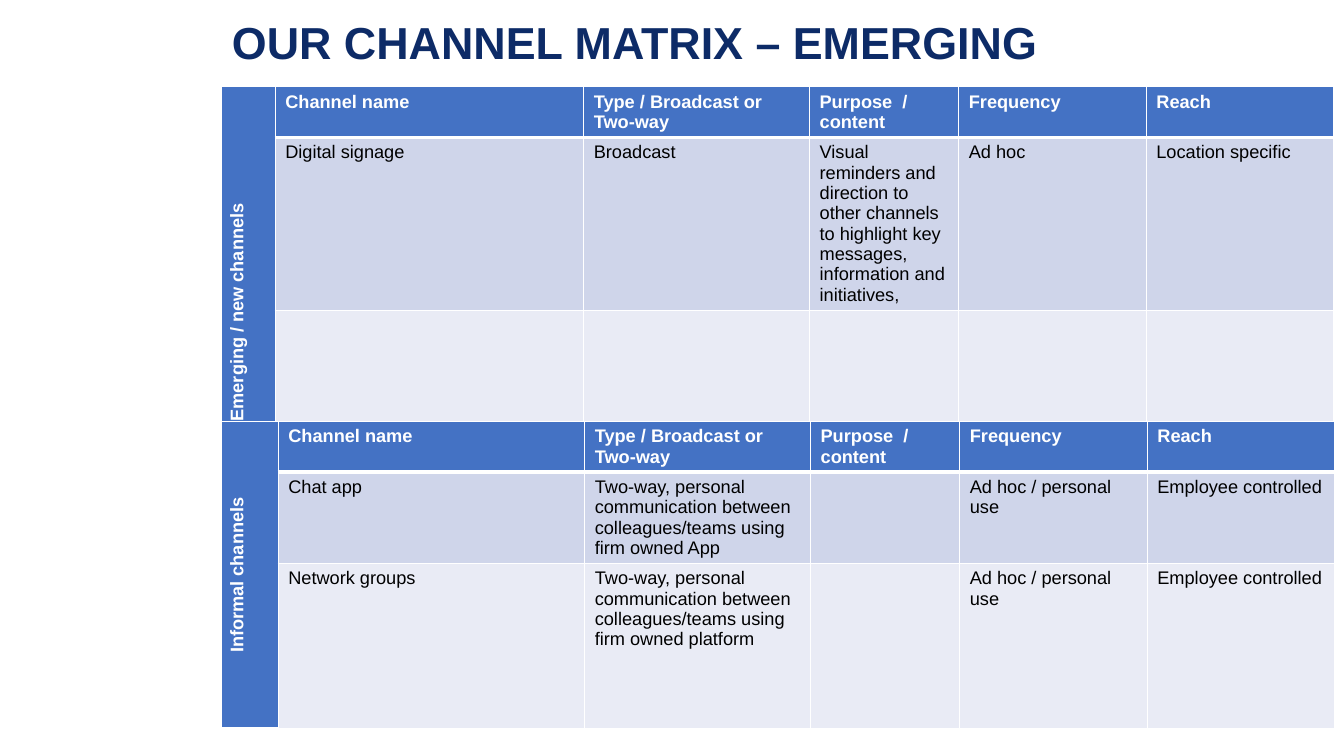
from lxml.etree import SubElement
from pptx import Presentation
from pptx.dml.color import RGBColor
from pptx.enum.text import MSO_ANCHOR, PP_ALIGN
from pptx.oxml.ns import qn
from pptx.util import Inches, Pt

HUES = {"navy": "0D2B67", "head": "4472C4", "odd": "CFD5EA",
        "even": "E9EBF5", "white": "FFFFFF", "black": "000000"}
BANDS = ["head", "odd", "even"]
HEADS = ["Channel name", "Type / Broadcast or Two-way",
         "Purpose  / content", "Frequency", "Reach"]
TAIL = [2.24, 1.48, 1.86, 1.86]
USE = ["", "Ad hoc / personal use", "Employee controlled"]
TEAMS = "Two-way, personal communication between colleagues/teams using "


class Deck:
    def __init__(self):
        self.show = Presentation()
        self.show.slide_width = Inches(13.33)
        self.show.slide_height = Inches(7.5)
        self.slide = self.show.slides.add_slide(self.show.slide_layouts[5])
        self.face = "Arial"
        self.size = 13
        self.left = 2.2
        self.width = 11.03

    def style(self, para, size, hue, bold):
        for run in para.runs:
            font = run.font
            font.name = self.face
            font.size = Pt(size)
            font.bold = bold
            font.color.rgb = RGBColor.from_string(HUES[hue])

    def title(self, text, top, height):
        box = self.slide.shapes.title
        box.left, box.top = Inches(self.left), Inches(top)
        box.width, box.height = Inches(self.width), Inches(height)
        frame = box.text_frame
        frame.text = text
        frame.word_wrap = True
        frame.vertical_anchor = MSO_ANCHOR.MIDDLE
        para = frame.paragraphs[0]
        para.alignment = PP_ALIGN.LEFT
        para.line_spacing = 0.9
        self.style(para, 32, "navy", True)

    def edges(self, cell, top, base):
        props = cell._tc.get_or_add_tcPr()
        for side, width in zip("LRTB", (1, 1, top, base)):
            line = SubElement(props, qn(f"a:ln{side}"), w=str(Pt(width)))
            fill = SubElement(line, qn("a:solidFill"))
            SubElement(fill, qn("a:srgbClr"), val=HUES["white"])

    def cell(self, cell, text, row, band):
        self.edges(cell, 3 if row == 1 else 1, 3 if row == 0 else 1)
        cell.fill.solid()
        cell.fill.fore_color.rgb = RGBColor.from_string(HUES[band])
        if text:
            cell.text_frame.text = text
            top = band == "head"
            para = cell.text_frame.paragraphs[0]
            self.style(para, self.size, "white" if top else "black", top)

    def matrix(self, label, top, height, cols, rows, body):
        frame = self.slide.shapes.add_table(
            len(rows), len(cols), Inches(self.left), Inches(top),
            Inches(self.width), Inches(height))
        table = frame.table
        for col, width in zip(table.columns, cols):
            col.width = Inches(width)
        for row, tall in zip(table.rows, rows):
            row.height = Inches(tall)
        frame.height = Inches(height)
        side = table.cell(0, 0)
        side.merge(table.cell(len(rows) - 1, 0))
        self.cell(side, label, 0, "head")
        side.text_frame.paragraphs[0].alignment = PP_ALIGN.CENTER
        side._tc.get_or_add_tcPr().set("vert", "vert270")
        for r, (texts, band) in enumerate(zip([HEADS] + body, BANDS)):
            for c, text in enumerate(texts, 1):
                self.cell(table.cell(r, c), text, r, band)

    def save(self):
        self.show.save("out.pptx")


def main():
    deck = Deck()
    deck.title("OUR CHANNEL MATRIX – EMERGING", 0.13, 0.64)
    deck.matrix(
        "Emerging / new channels", 0.86, 2.84,
        [0.53, 3.06] + TAIL, [0.47, 0.68, 0.47],
        [["Digital signage", "Broadcast",
          "Visual reminders and direction to other channels to highlight "
          "key messages, information and initiatives,",
          "Ad hoc", "Location specific"], [""] * 5])
    deck.matrix(
        "Informal channels", 4.18, 2.47,
        [0.56, 3.04] + TAIL, [0.34, 0.76, 0.87],
        [["Chat app", TEAMS + "firm owned App"] + USE,
         ["Network groups", TEAMS + "firm owned platform"] + USE])
    deck.save()


if __name__ == "__main__":
    main()
